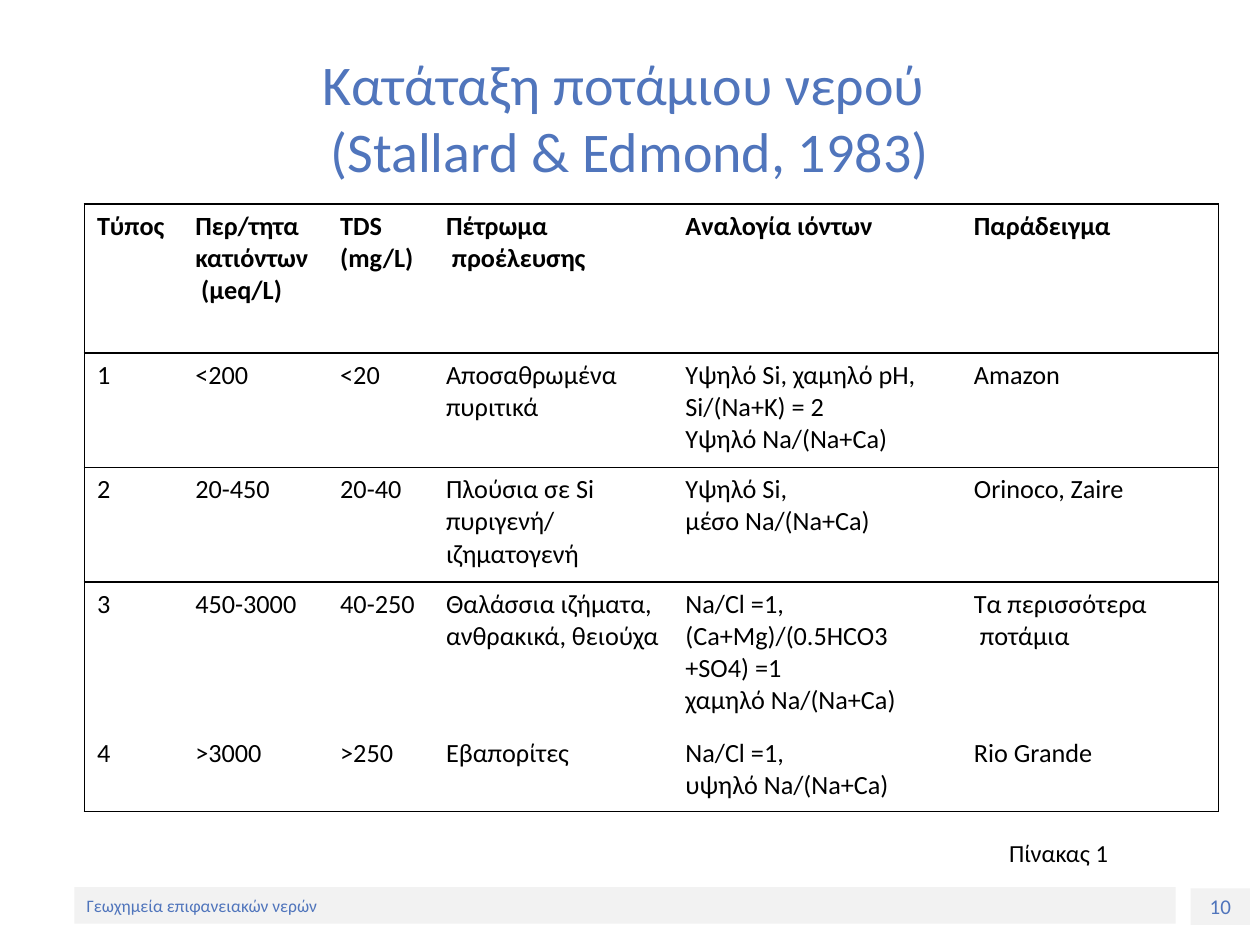
from typing import NamedTuple

from lxml.etree import SubElement
from pptx import Presentation
from pptx.dml.color import RGBColor
from pptx.enum.shapes import MSO_SHAPE
from pptx.enum.text import MSO_ANCHOR, PP_ALIGN
from pptx.oxml.ns import qn
from pptx.util import Inches, Pt

WIDE, HIGH = Inches(10), Inches(7.5)
BLUE, BLACK, GREY, WHITE = "5075BC", "000000", "F2F2F2", "FFFFFF"
PLAIN = "{2D5ABB26-0587-4C30-8999-92F81FD0307C}"


class Area(NamedTuple):
    """A place on the slide, in percent of its width and height."""
    left: float
    top: float
    width: float
    height: float

    def spot(self) -> tuple:
        return (int(WIDE * self.left / 100), int(HIGH * self.top / 100),
                int(WIDE * self.width / 100), int(HIGH * self.height / 100))


class Label(NamedTuple):
    text: str
    area: Area
    fill: str
    color: str
    size: int
    align: PP_ALIGN = PP_ALIGN.LEFT
    anchor: MSO_ANCHOR = MSO_ANCHOR.MIDDLE


def tint(code: str) -> RGBColor:
    return RGBColor.from_string(code)


def write(frame, text: str, *, size=15, color=BLACK, bold=False,
          align=PP_ALIGN.LEFT, anchor=MSO_ANCHOR.TOP) -> None:
    """Fill a frame: \\n starts a paragraph, \\v breaks a line."""
    frame.text = text
    frame.word_wrap = True
    frame.vertical_anchor = anchor
    for para in frame.paragraphs:
        para.alignment = align
        for run in para.runs:
            font = run.font
            font.name, font.size, font.bold = "Calibri", Pt(size), bold
            font.color.rgb = tint(color)


def draw_label(slide, label: Label) -> None:
    shape = slide.shapes.add_shape(MSO_SHAPE.RECTANGLE, *label.area.spot())
    shape.shadow.inherit = False
    shape.fill.solid()
    shape.fill.fore_color.rgb = tint(label.fill)
    shape.line.fill.background()
    write(shape.text_frame, label.text, size=label.size, color=label.color,
          align=label.align, anchor=label.anchor)


def edge(cell, sides: str) -> None:
    """Rule the given sides (L, R, T, B, in that order) of a cell."""
    props = cell._tc.get_or_add_tcPr()
    for side in sides:
        line = SubElement(props, qn(f"a:ln{side}"), w=str(Pt(1)))
        fill = SubElement(line, qn("a:solidFill"))
        SubElement(fill, qn("a:srgbClr"), val=BLACK)


def draw_table(slide, rows: list, area: Area, widths: list, heights: list) -> None:
    frame = slide.shapes.add_table(len(rows), len(widths), *area.spot())
    table = frame.table
    table.first_row = table.horz_banding = False
    table._tbl.tblPr.find(qn("a:tableStyleId")).text = PLAIN
    for col, width in zip(table.columns, widths):
        col.width = Inches(width)
    for row, height in zip(table.rows, heights):
        row.height = Inches(height)
    ruled = {0, 1, len(rows) - 1}  # rows with a line beneath
    for r, texts in enumerate(rows):
        for c, text in enumerate(texts):
            cell = table.cell(r, c)
            sides = (("L" if c == 0 else "")
                     + ("R" if c == len(widths) - 1 else "")
                     + ("T" if r == 0 or r - 1 in ruled else "")
                     + ("B" if r in ruled else ""))
            edge(cell, sides)
            cell.fill.background()
            write(cell.text_frame, text, bold=r == 0)


TITLE = "Κατάταξη ποτάμιου νερού \v(Stallard & Edmond, 1983)"
ROWS = [
    ["Τύπος", "Περ/τητα\nκατιόντων\n (μeq/L)", "TDS\n(mg/L)",
     "Πέτρωμα\n προέλευσης", "Αναλογία ιόντων", "Παράδειγμα"],
    ["1", "<200", "<20", "Αποσαθρωμένα\nπυριτικά",
     "Υψηλό Si, χαμηλό pH,\nSi/(Na+K) = 2\nΥψηλό Na/(Na+Ca)", "Amazon"],
    ["2", "20-450", "20-40", "Πλούσια σε Si\nπυριγενή/ ιζηματογενή",
     "Υψηλό Si,\nμέσο Na/(Na+Ca)", "Orinoco, Zaire"],
    ["3", "450-3000", "40-250", "Θαλάσσια ιζήματα,\nανθρακικά, θειούχα",
     "Na/Cl =1,\n(Ca+Mg)/(0.5HCO3 +SO4) =1\nχαμηλό Na/(Na+Ca)",
     "Τα περισσότερα\n ποτάμια"],
    ["4", ">3000", ">250", "Εβαπορίτες",
     "Na/Cl =1,\nυψηλό Na/(Na+Ca)", "Rio Grande"],
]
LABELS = [
    Label("10", Area(94.5, 94, 4.7, 3.87), GREY, BLUE, 12, PP_ALIGN.CENTER),
    Label("Γεωχημεία επιφανειακών νερών", Area(5.9, 93.87, 87.4, 3.87),
          GREY, BLUE, 10),
    Label("Πίνακας 1", Area(79.1, 87.87, 11.8, 4.8), WHITE, BLACK, 14),
]


def main() -> None:
    deck = Presentation()
    deck.slide_width, deck.slide_height = WIDE, HIGH
    slide = deck.slides.add_slide(deck.slide_layouts[5])

    # Title
    title = slide.shapes.title
    title.left, title.top, title.width, title.height = Area(5, 4, 90, 16.67).spot()
    write(title.text_frame, TITLE, size=32, color=BLUE,
          align=PP_ALIGN.CENTER, anchor=MSO_ANCHOR.MIDDLE)

    # River water classes
    draw_table(slide, ROWS, Area(6.7, 21.6, 90, 64.13),
               [0.78, 1.15, 0.84, 1.9, 2.29, 2.04],
               [1.18, 0.91, 0.91, 1.18, 0.64])

    # Page number, footer and caption
    for label in LABELS:
        draw_label(slide, label)

    deck.save("out.pptx")


if __name__ == "__main__":
    main()
